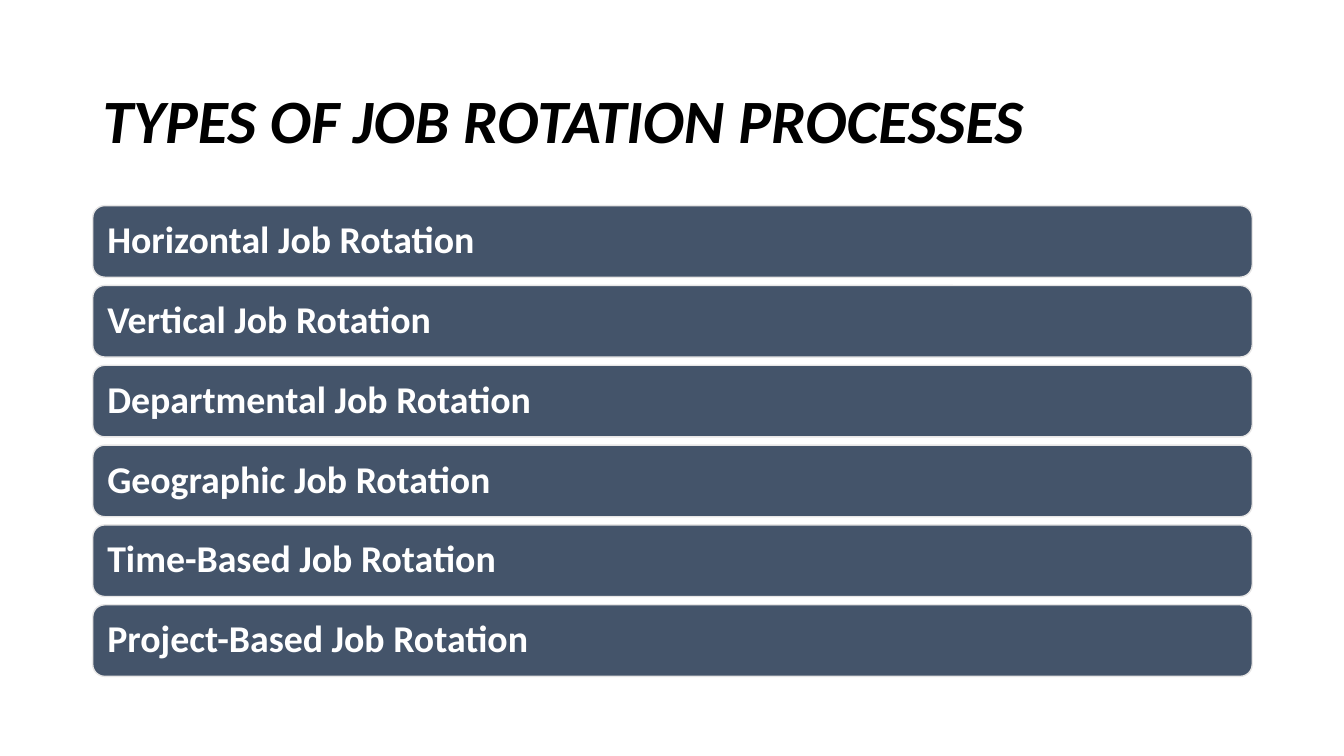
from dataclasses import dataclass

import pptx
import pptx.dml.color
import pptx.enum.shapes
import pptx.enum.text
import pptx.util
from pptx.util import Inches


@dataclass(frozen=True)
class Theme:
    font: str = "Calibri"
    title_color: str = "000000"
    bar_fill: str = "44546A"
    bar_line: str = "E7E6E6"
    bar_text: str = "FFFFFF"
    title_size: int = 44
    bar_size: int = 27


THEME = Theme()

ROTATION_TYPES = [
    "Horizontal Job Rotation",
    "Vertical Job Rotation",
    "Departmental Job Rotation",
    "Geographic Job Rotation",
    "Time-Based Job Rotation",
    "Project-Based Job Rotation",
]

LEFT, WIDTH = 0.92, 11.5
FIRST_BAR_TOP, LAST_BAR_TOP, BAR_HEIGHT = 2.04, 6, 0.71
BAR_INSET = 0.11


def rgb(color):
    return pptx.dml.color.RGBColor.from_string(color)


def write_text(shape, text, size, color, italic=False):
    """Fill the shape with one bold, left-aligned, vertically centred line."""
    frame = shape.text_frame
    frame.word_wrap = True
    frame.vertical_anchor = pptx.enum.text.MSO_ANCHOR.MIDDLE
    para = frame.paragraphs[0]
    para.alignment = pptx.enum.text.PP_ALIGN.LEFT
    para.line_spacing = 0.9
    span = para.add_run()
    span.text = text
    span.font.name = THEME.font
    span.font.size = pptx.util.Pt(size)
    span.font.bold = True
    span.font.italic = italic
    span.font.color.rgb = rgb(color)


def add_title(page, text):
    box = page.shapes.add_textbox(
        Inches(LEFT), Inches(0.61), Inches(WIDTH), Inches(1.24))
    write_text(box, text, THEME.title_size, THEME.title_color, italic=True)


def add_bar(page, top, text):
    bar = page.shapes.add_shape(
        pptx.enum.shapes.MSO_SHAPE.ROUNDED_RECTANGLE,
        Inches(LEFT), Inches(top), Inches(WIDTH), Inches(BAR_HEIGHT))
    bar.shadow.inherit = False
    bar.fill.solid()
    bar.fill.fore_color.rgb = rgb(THEME.bar_fill)
    bar.line.color.rgb = rgb(THEME.bar_line)
    bar.line.width = pptx.util.Pt(1)
    frame = bar.text_frame
    frame.margin_left = frame.margin_right = Inches(BAR_INSET)
    frame.margin_top = frame.margin_bottom = Inches(BAR_INSET)
    write_text(bar, text, THEME.bar_size, THEME.bar_text)


def main():
    deck = pptx.Presentation()
    deck.slide_width, deck.slide_height = Inches(13.33), Inches(7.5)
    page = deck.slides.add_slide(deck.slide_layouts[6])
    add_title(page, "TYPES OF JOB ROTATION PROCESSES")
    pitch = (LAST_BAR_TOP - FIRST_BAR_TOP) / (len(ROTATION_TYPES) - 1)
    for index, rotation_type in enumerate(ROTATION_TYPES):
        add_bar(page, FIRST_BAR_TOP + index * pitch, rotation_type)
    deck.save("out.pptx")


if __name__ == "__main__":
    main()
